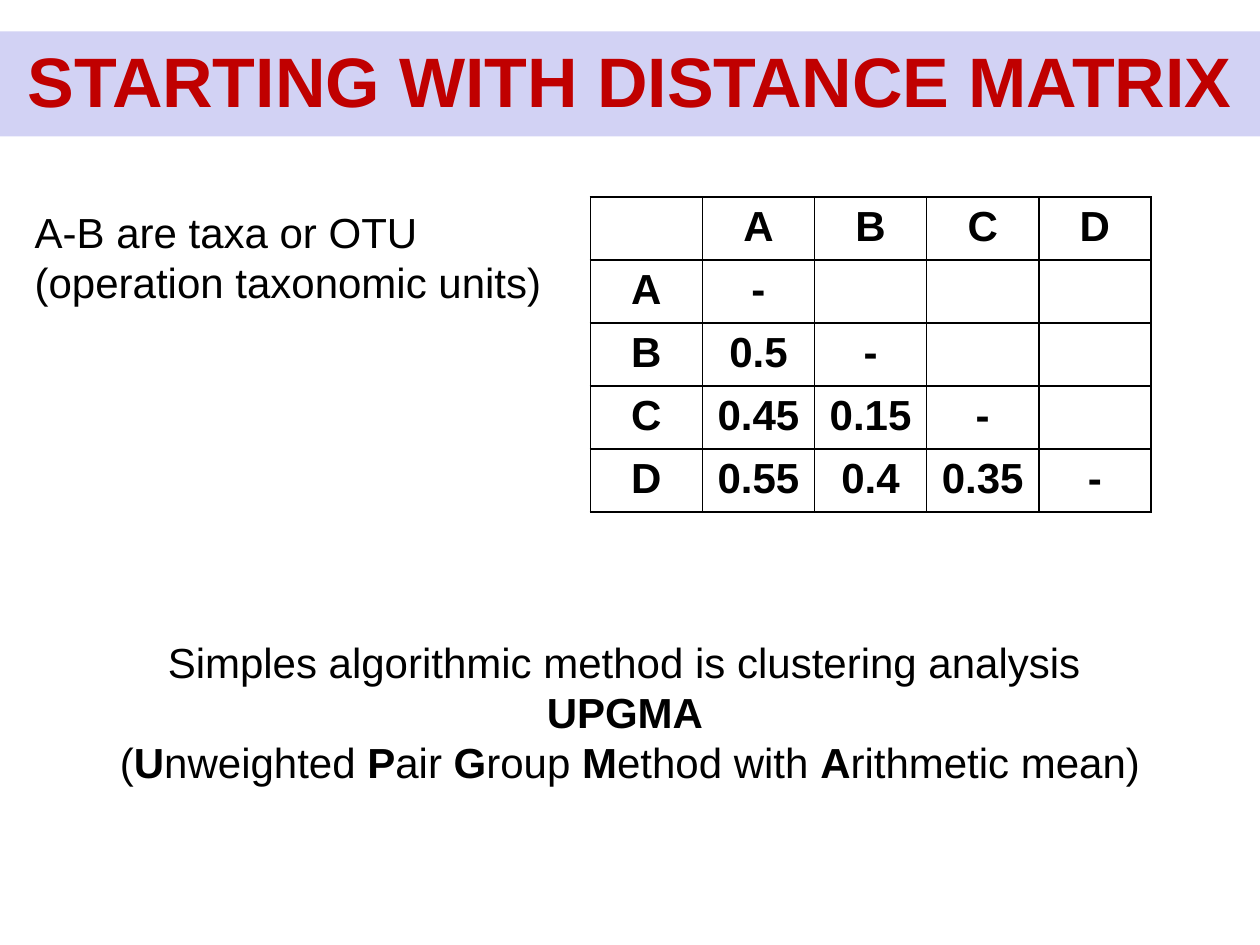
from pptx import Presentation
from pptx.dml.color import RGBColor
from pptx.enum import text
from pptx.oxml import parse_xml
from pptx.oxml.ns import nsdecls
from pptx.util import Cm, Pt

FONT = "Arial"
COLORS = {"ink": "000000", "title": "C00000", "band": "D2D2F4"}
TAXA = "ABCD"
DISTANCES = [[], ["0.5"], ["0.45", "0.15"], ["0.55", "0.4", "0.35"]]
METHOD_NAME = ["(", "U", "nweighted ", "P", "air ", "G", "roup ", "M",
               "ethod with ", "A", "rithmetic mean)"]


def format_runs(paragraph, size=24, color="ink", bold=False):
    for run in paragraph.runs:
        run.font.name = FONT
        run.font.size = Pt(size)
        run.font.bold = bold
        run.font.color.rgb = RGBColor.from_string(COLORS[color])


def add_text_frame(slide, left, top, width, height):
    box = slide.shapes.add_textbox(Cm(left), Cm(top), Cm(width), Cm(height))
    box.text_frame.word_wrap = True
    box.text_frame.auto_size = text.MSO_AUTO_SIZE.SHAPE_TO_FIT_TEXT
    return box.text_frame


def place_title(slide, left, top, width, height):
    title = slide.shapes.title
    title.left, title.top, title.width, title.height = map(Cm, (left, top, width, height))
    title.fill.solid()
    title.fill.fore_color.rgb = RGBColor.from_string(COLORS["band"])
    frame = title.text_frame
    frame.text = "STARTING WITH DISTANCE MATRIX"
    frame.auto_size = text.MSO_AUTO_SIZE.SHAPE_TO_FIT_TEXT
    frame.vertical_anchor = text.MSO_ANCHOR.TOP
    frame.paragraphs[0].alignment = text.PP_ALIGN.CENTER
    format_runs(frame.paragraphs[0], size=40, color="title", bold=True)


def add_taxa_note(slide, left, top, width, height):
    paragraph = add_text_frame(slide, left, top, width, height).paragraphs[0]
    paragraph.text = "A-B are taxa or OTU (operation taxonomic units)"
    format_runs(paragraph)


def add_borders(cell):
    properties = cell._tc.get_or_add_tcPr()
    for index, side in enumerate(("lnL", "lnR", "lnT", "lnB")):
        properties.insert(index, parse_xml(
            f'<a:{side} {nsdecls("a")} w="12700"><a:solidFill>'
            f'<a:srgbClr val="{COLORS["ink"]}"/></a:solidFill></a:{side}>'))


def add_distance_matrix(slide, left, top, width, height):
    # Header row, then the lower triangle with dashes on the diagonal
    rows = [["", *TAXA]]
    rows += [[taxon, *values, "-"] for taxon, values in zip(TAXA, DISTANCES)]
    count = len(rows)
    table = slide.shapes.add_table(count, count, Cm(left), Cm(top),
                                   Cm(width), Cm(height)).table
    table.first_row = table.horz_banding = False
    for row_index, row in enumerate(rows):
        for column_index in range(count):
            cell = table.cell(row_index, column_index)
            cell.fill.background()
            add_borders(cell)
            paragraph = cell.text_frame.paragraphs[0]
            paragraph.alignment = text.PP_ALIGN.CENTER
            paragraph.font.size = Pt(24)
            if column_index < len(row) and row[column_index]:
                paragraph.text = row[column_index]
                format_runs(paragraph, bold=True)


def add_method_note(slide, left, top, width, height):
    frame = add_text_frame(slide, left, top, width, height)
    # Statement and acronym, separated by a line break
    statement = frame.paragraphs[0]
    statement.text = "Simples algorithmic method is clustering analysis \vUPGMA "
    # Full name, with the letters of the acronym in bold
    full_name = frame.add_paragraph()
    for part in METHOD_NAME:
        full_name.add_run().text = part
    for paragraph in (statement, full_name):
        paragraph.alignment = text.PP_ALIGN.CENTER
        format_runs(paragraph)
        for run in paragraph.runs[1::2]:
            run.font.bold = True


def main():
    presentation = Presentation()
    presentation.slide_width, presentation.slide_height = Cm(25.4), Cm(19.05)
    slide = presentation.slides.add_slide(presentation.slide_layouts[5])
    add_distance_matrix(slide, 11.9, 3.97, 11.3, 6)
    place_title(slide, 0, 0.63, 25.4, 1.96)
    add_taxa_note(slide, 0.45, 4.03, 11.5, 2.31)
    add_method_note(slide, 1, 12.7, 23.4, 3.33)
    presentation.save("out.pptx")


if __name__ == "__main__":
    main()
